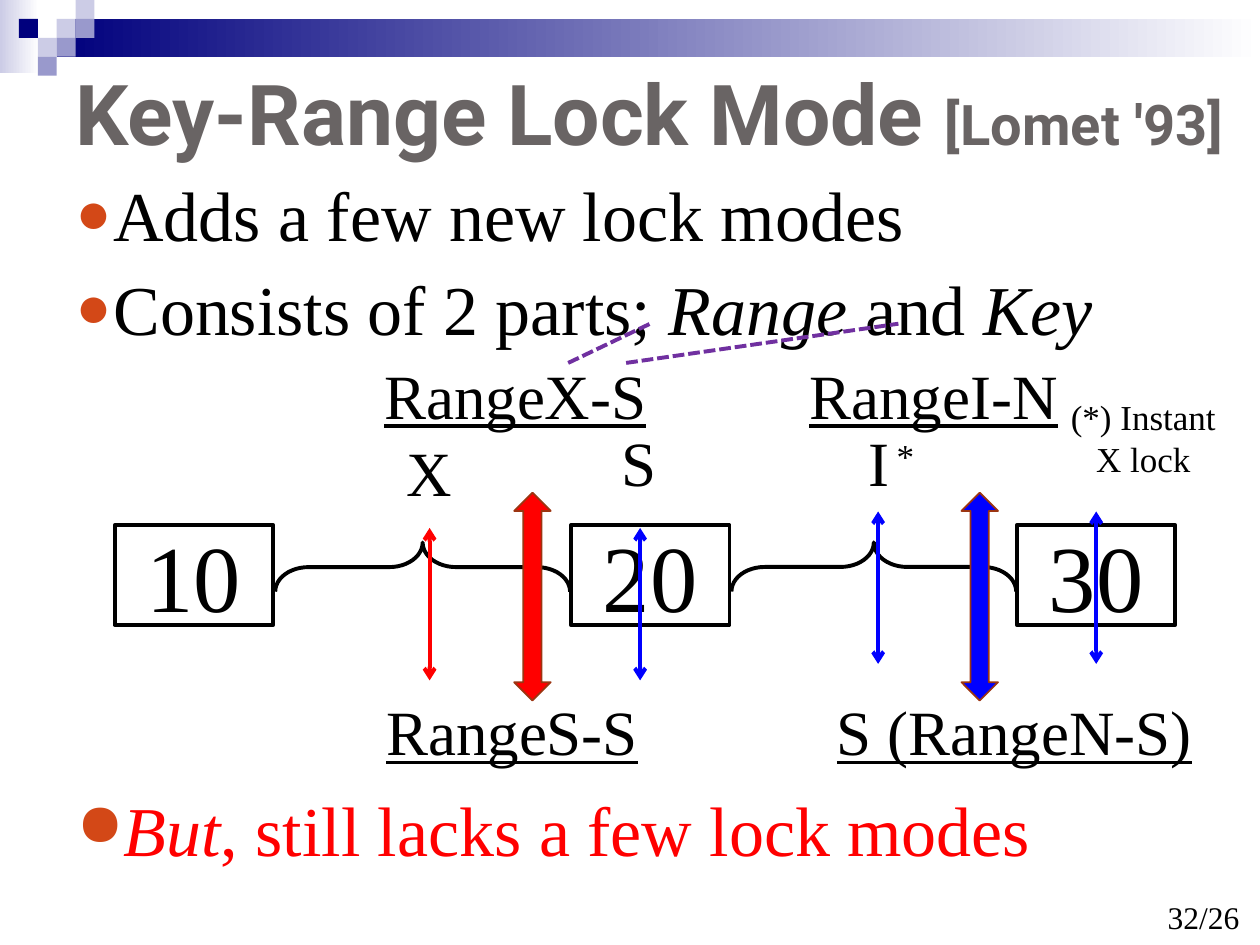
from lxml import etree
from pptx import Presentation
from pptx.dml.color import RGBColor
from pptx.enum.dml import MSO_LINE
from pptx.enum.shapes import MSO_CONNECTOR, MSO_SHAPE
from pptx.enum.text import MSO_ANCHOR, MSO_AUTO_SIZE, PP_ALIGN
from pptx.oxml.ns import qn
from pptx.util import Pt

RECT, BRACE, ARROW = MSO_SHAPE.RECTANGLE, MSO_SHAPE.RIGHT_BRACE, MSO_SHAPE.UP_DOWN_ARROW
STRAIGHT, DASH = MSO_CONNECTOR.STRAIGHT, MSO_LINE.SQUARE_DOT
MIDDLE, BOTTOM = MSO_ANCHOR.MIDDLE, MSO_ANCHOR.BOTTOM
LEFT, CENTER, NO_FIT = PP_ALIGN.LEFT, PP_ALIGN.CENTER, MSO_AUTO_SIZE.NONE

BLACK = RGBColor(0x00, 0x00, 0x00)
WHITE = RGBColor(0xFF, 0xFF, 0xFF)
GRAY = RGBColor(0x69, 0x64, 0x64)
NAVY = RGBColor(0x00, 0x00, 0x7D)
LILAC = RGBColor(0x99, 0x99, 0xCC)
PALE = RGBColor(0xCC, 0xCC, 0xE6)
RED = RGBColor(0xFF, 0x00, 0x00)
BLUE = RGBColor(0x00, 0x00, 0xFF)
PURPLE = RGBColor(0x70, 0x30, 0xA0)
ORANGE = RGBColor(0xD3, 0x48, 0x17)
RUST = RGBColor(0x9C, 0x35, 0x11)
SERIF = "Times New Roman"


def add_run(p, text, size, color=BLACK, font=SERIF):
    r = p.add_run()
    r.text = text
    r.font.size = Pt(size)
    r.font.name = font
    r.font.color.rgb = color
    return r


def add_bullet(p, runs, color=BLACK):
    p.space_before = Pt(5.8)
    pPr = p._p.get_or_add_pPr()
    pPr.set("marL", str(Pt(21.6)))
    pPr.set("indent", str(-Pt(21.6)))
    bu_clr = etree.SubElement(pPr, qn("a:buClr"))
    etree.SubElement(bu_clr, qn("a:srgbClr"), val=str(ORANGE))
    etree.SubElement(pPr, qn("a:buSzPct"), val="85000")
    etree.SubElement(pPr, qn("a:buChar"), char="●")
    for text, italic in runs:
        add_run(p, text, 40, color).font.italic = italic


prs = Presentation()
prs.slide_width, prs.slide_height = Pt(720), Pt(540)
s = prs.slides.add_slide(prs.slide_layouts[1])

# Header bars
for x, y, w, h, color in ((0, 0, 22.3, 41.8, PALE), (32.4, 10.8, 687.6, 21.6, NAVY)):
    sp = s.shapes.add_shape(RECT, Pt(x), Pt(y), Pt(w), Pt(h))
    sp.shadow.inherit = False
    sp.line.fill.background()
    sp.fill.gradient()
    sp.fill.gradient_angle = 0
    for stop, stop_color in zip(sp.fill.gradient_stops, (color, WHITE)):
        stop.color.rgb = stop_color

# Header squares on a grid
UNIT = 10.8
for col, row, color in ((3, 1, PALE), (4, 0, PALE), (4, 1, LILAC), (2, 2, PALE),
                        (1, 1, NAVY), (3, 2, LILAC), (2, 3, LILAC)):
    sp = s.shapes.add_shape(RECT, Pt(col * UNIT), Pt(row * UNIT), Pt(UNIT), Pt(UNIT))
    sp.shadow.inherit = False
    sp.fill.solid()
    sp.fill.fore_color.rgb = color
    sp.line.fill.background()

# Title
title = s.shapes.title
title.left, title.top, title.width, title.height = Pt(36), Pt(31.7), Pt(675.4), Pt(68.4)
tf = title.text_frame
tf.auto_size = NO_FIT
tf.vertical_anchor = BOTTOM
tf.margin_bottom = Pt(7.2)
p = tf.paragraphs[0]
p.alignment = LEFT
for text, size in (("Key-Range Lock Mode ", 48), ("[Lomet '93]", 32)):
    add_run(p, text, size, GRAY, "Roboto").font.bold = True

# Bullet list
body = s.placeholders[1]
body.left, body.top, body.width, body.height = Pt(36), Pt(94.3), Pt(669.6), Pt(124.6)
tf = body.text_frame
tf.auto_size = NO_FIT
add_bullet(tf.paragraphs[0], [("Adds a few new lock modes", False)])
add_bullet(tf.add_paragraph(), [("Consists of 2 parts; ", False), ("Range", True),
                                (" and ", False), ("Key", True)])

# Closing bullet
tf = s.shapes.add_textbox(Pt(36.7), Pt(445.7), Pt(669.6), Pt(62.6)).text_frame
tf.word_wrap = True
add_bullet(tf.paragraphs[0], [("But", True), (", still lacks a few lock modes", False)], RED)

# Key boxes
for x, key in ((65.5, "10"), (326.2, "20"), (581, "30")):
    sp = s.shapes.add_shape(RECT, Pt(x), Pt(300.2), Pt(90.7), Pt(56.9))
    sp.shadow.inherit = False
    sp.fill.background()
    sp.line.color.rgb = BLACK
    sp.line.width = Pt(2.25)
    tf = sp.text_frame
    tf.vertical_anchor = MIDDLE
    p = tf.paragraphs[0]
    p.alignment = CENTER
    add_run(p, key, 54)

# Braces over the gaps between keys
for x, y, length in ((227.5, 239.8, 168.5), (485.3, 242.6, 162.7)):
    sp = s.shapes.add_shape(BRACE, Pt(x), Pt(y), Pt(28.1), Pt(length))
    sp.rotation = 270
    sp.adjustments[0], sp.adjustments[1] = 0.68, 0.5
    sp.shadow.inherit = False
    sp.fill.background()
    sp.line.color.rgb = BLACK
    sp.line.width = Pt(2.25)

# Lock mode labels
for lines, x, y, w, h, size, underline in (
        (["RangeX-S"], 201.6, 196.6, 185.8, 56.9, 36, True),
        (["RangeI-N"], 440.6, 196.6, 185.8, 56.9, 36, True),
        (["RangeS-S"], 172.8, 388.8, 239.8, 56.9, 36, True),
        (["S (RangeN-S)"], 450.7, 388.8, 257.8, 56.9, 36, True),
        (["X"], 205.2, 236.2, 80.6, 66.2, 36, False),
        (["S"], 324.7, 230.4, 80.6, 66.2, 36, False),
        (["I"], 462.2, 230.4, 80.6, 66.2, 36, False),
        (["*"], 496.1, 241.9, 42.5, 36.7, 20, False),
        (["(*) Instant", "X lock"], 595.4, 224.6, 115.9, 51.1, 20, False)):
    tf = s.shapes.add_textbox(Pt(x), Pt(y), Pt(w), Pt(h)).text_frame
    tf.word_wrap = True
    tf.vertical_anchor = MIDDLE
    for i, line in enumerate(lines):
        p = tf.add_paragraph() if i else tf.paragraphs[0]
        p.alignment = CENTER
        add_run(p, line, size).font.underline = underline

# Thin lock arrows and dashed pointers
for x1, y1, x2, y2, color, dashed in (
        (245.5, 301.7, 245.5, 388.8, RED, False),
        (365.8, 301.7, 365.8, 388.8, BLUE, False),
        (626.4, 292.3, 626.4, 379.4, BLUE, False),
        (501.8, 292.3, 501.8, 379.4, BLUE, False),
        (324.7, 207.4, 371.5, 185, PURPLE, True),
        (357.8, 207.4, 513.4, 185, PURPLE, True)):
    line = s.shapes.add_connector(STRAIGHT, Pt(x1), Pt(y1), Pt(x2), Pt(y2))
    line.line.color.rgb = color
    line.line.width = Pt(2.25)
    if dashed:
        line.line.dash_style = DASH
    else:
        for end in ("a:headEnd", "a:tailEnd"):
            etree.SubElement(line.line._get_or_add_ln(), qn(end), type="arrow")
    etree.SubElement(line._element.spPr, qn("a:effectLst"))

# Thick range lock arrows
for x, color in ((293.8, RED), (549.4, BLUE)):
    sp = s.shapes.add_shape(ARROW, Pt(x), Pt(281.5), Pt(20.9), Pt(118.8))
    sp.shadow.inherit = False
    sp.fill.solid()
    sp.fill.fore_color.rgb = color
    sp.line.color.rgb = RUST
    sp.line.width = Pt(1)

# Page number
tf = s.shapes.add_textbox(Pt(660.2), Pt(509.8), Pt(62.6), Pt(28.8)).text_frame
add_run(tf.paragraphs[0], "32/26", 18)

prs.save("out.pptx")
